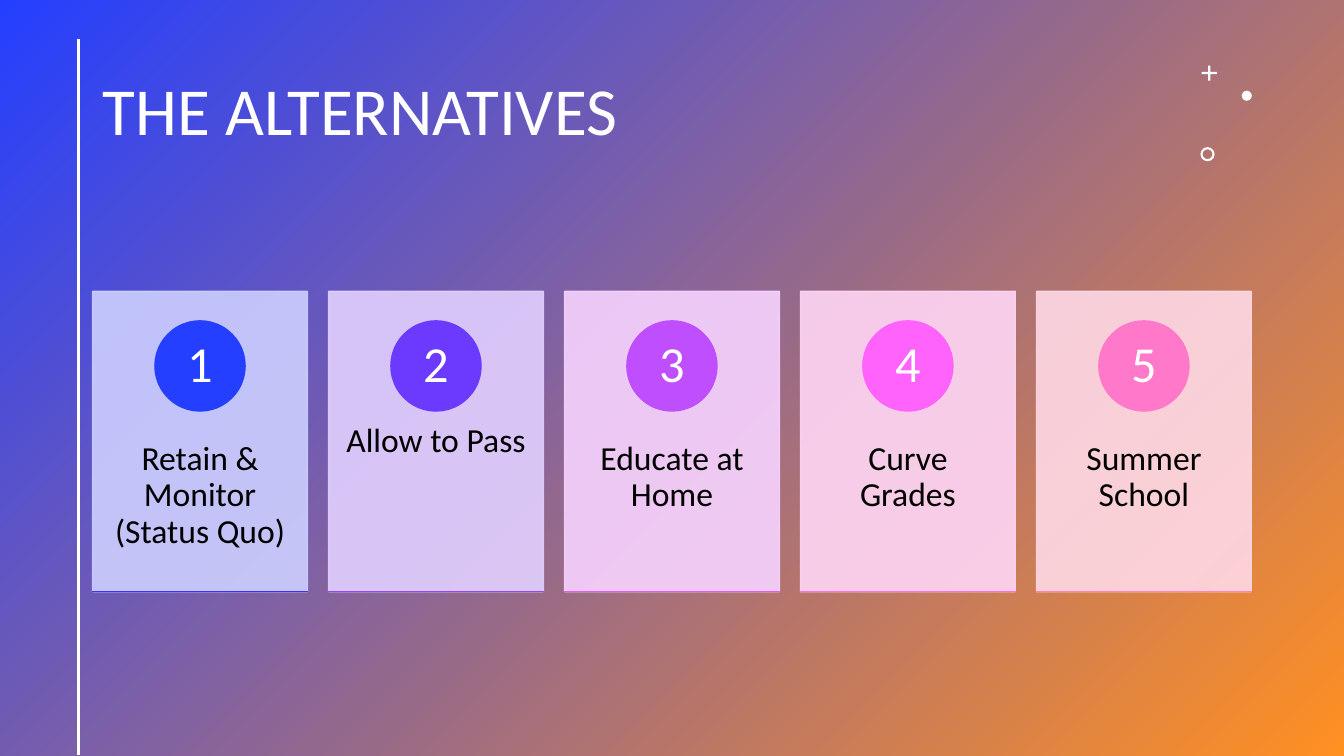
from pptx import Presentation
from pptx.dml.color import RGBColor
from pptx.enum.shapes import MSO_CONNECTOR, MSO_SHAPE as SHAPE
from pptx.enum.text import MSO_ANCHOR as ANCHOR, PP_ALIGN as ALIGN
from pptx.oxml.ns import qn
from pptx.util import Pt
from lxml import etree

WHITE = RGBColor(0xFF, 0xFF, 0xFF)
BLACK = RGBColor(0x00, 0x00, 0x00)
BLUE = RGBColor(0x24, 0x3F, 0xFF)
ORANGE = RGBColor(0xFF, 0x90, 0x22)

# Label, card tint, badge colour, base line colour
ALTERNATIVES = [
    ("Retain & Monitor (Status Quo)", RGBColor(0xCD, 0xCF, 0xFF), BLUE, RGBColor(0x3D, 0x2F, 0xFF)),
    ("Allow to Pass", RGBColor(0xE2, 0xD0, 0xFF), RGBColor(0x6C, 0x39, 0xFF), RGBColor(0x97, 0x44, 0xFF)),
    ("Educate at Home", RGBColor(0xF7, 0xD3, 0xFF), RGBColor(0xBF, 0x4E, 0xFF), RGBColor(0xE2, 0x59, 0xFF)),
    ("Curve Grades", RGBColor(0xFF, 0xD6, 0xF5), RGBColor(0xFF, 0x63, 0xFC), RGBColor(0xFF, 0x6E, 0xE1)),
    ("Summer School", RGBColor(0xFF, 0xD9, 0xE6), RGBColor(0xFF, 0x78, 0xC9), RGBColor(0xFF, 0x83, 0xB6)),
]

prs = Presentation()
prs.slide_width, prs.slide_height = Pt(960), Pt(540)
slide = prs.slides.add_slide(prs.slide_layouts[5])
shapes = slide.shapes


def write(holder, text, size, color, align=ALIGN.CENTER, anchor=ANCHOR.TOP, inset=(7.2, 3.6)):
    frame = holder.text_frame
    frame.word_wrap = True
    frame.vertical_anchor = anchor
    frame.margin_left = frame.margin_right = Pt(inset[0])
    frame.margin_top = frame.margin_bottom = Pt(inset[1])
    frame.text = text
    paragraph = frame.paragraphs[0]
    paragraph.alignment = align
    paragraph.line_spacing = 0.9
    font = paragraph.runs[0].font
    font.name, font.size, font.color.rgb = "Calibri", Pt(size), color


def draw(kind, left, top, width, height, color, outlined=False, alpha=None):
    shape = shapes.add_shape(kind, Pt(left), Pt(top), Pt(width), Pt(height))
    shape.shadow.inherit = False
    shape.fill.solid()
    shape.fill.fore_color.rgb = color
    if outlined:
        shape.line.color.rgb = color
        shape.line.width = Pt(1)
    else:
        shape.line.fill.background()
    if alpha:
        for tint in shape._element.spPr.iter(qn("a:srgbClr")):
            etree.SubElement(tint, qn("a:alpha")).set("val", str(alpha * 1000))
    return shape


# Gradient backdrop
backdrop = draw(SHAPE.RECTANGLE, 0, 0, 960, 540, BLUE)
backdrop.fill.gradient()
backdrop.fill.gradient_angle = 315
for stop, color, position in zip(backdrop.fill.gradient_stops, (BLUE, ORANGE), (0, 1)):
    stop.color.rgb = color
    stop.position = position

# Title, raised above the backdrop
title = shapes.title
title.left, title.top, title.width, title.height = Pt(66.2), Pt(28.8), Pt(771.8), Pt(104.4)
write(title, "THE ALTERNATIVES", 48, WHITE, align=ALIGN.LEFT, anchor=ANCHOR.MIDDLE)
backdrop._element.addnext(title._element)

# Vertical rule
rule = shapes.add_connector(MSO_CONNECTOR.STRAIGHT, Pt(56.2), Pt(28), Pt(56.2), Pt(539.3))
rule.line.color.rgb = WHITE
rule.line.width = Pt(2)
etree.SubElement(rule._element.spPr, qn("a:effectLst"))

# Corner ornaments: plus, dot and ring
plus = draw(SHAPE.CROSS, 858.4, 46.8, 10.8, 10.8, WHITE)
plus.adjustments[0] = 0.43
draw(SHAPE.OVAL, 887, 64.8, 7.2, 7.2, WHITE)
ring = draw(SHAPE.DONUT, 857.5, 105.1, 10.1, 10.1, WHITE)
ring.adjustments[0] = 0.15

# Cards
CARD_LEFT, CARD_TOP, CARD_WIDTH, CARD_HEIGHT, PITCH = 66.2, 208, 153.4, 214.6, 168.55
BADGE, NUMBER = 64.4, 45.4
for index, (label, tint, badge_color, base_color) in enumerate(ALTERNATIVES):
    left = CARD_LEFT + index * PITCH
    center = left + CARD_WIDTH / 2
    draw(SHAPE.RECTANGLE, left, CARD_TOP, CARD_WIDTH, CARD_HEIGHT, tint, outlined=True, alpha=90)
    caption = shapes.add_textbox(Pt(left), Pt(289.4), Pt(CARD_WIDTH), Pt(128.9))
    write(caption, label, 24, BLACK, inset=(12, 26))
    draw(SHAPE.OVAL, center - BADGE / 2, 229.2, BADGE, BADGE, badge_color, outlined=True)
    number = shapes.add_textbox(Pt(center - NUMBER / 2), Pt(238.7), Pt(NUMBER), Pt(NUMBER))
    write(number, str(index + 1), 36, WHITE, anchor=ANCHOR.MIDDLE, inset=(5, 1))
    draw(SHAPE.RECTANGLE, left, CARD_TOP + CARD_HEIGHT, CARD_WIDTH, 0.1, base_color, outlined=True)

prs.save("out.pptx")
